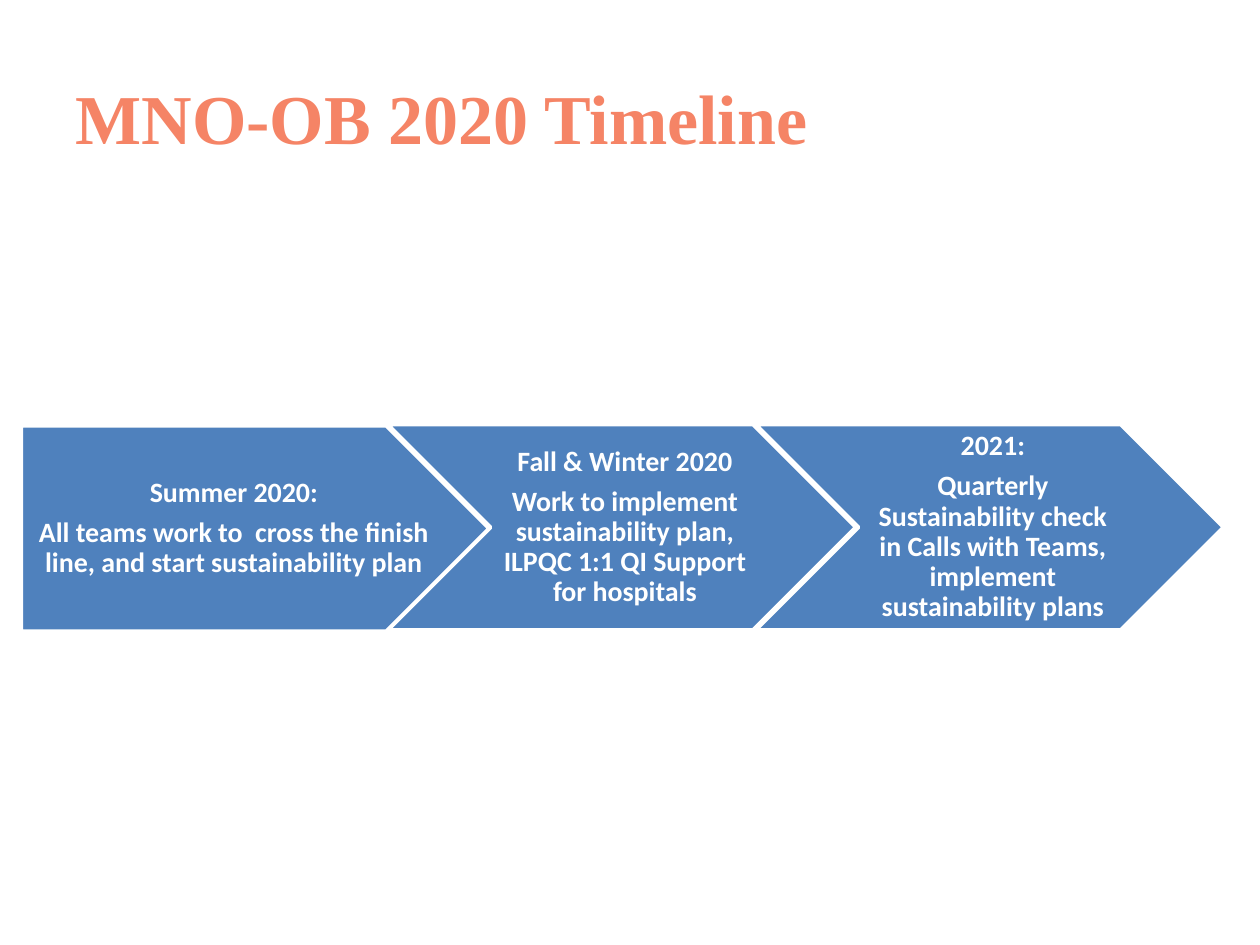
from pptx import Presentation
from pptx.dml.color import RGBColor
from pptx.enum.shapes import MSO_SHAPE
from pptx.enum.text import MSO_ANCHOR, PP_ALIGN
from pptx.util import Pt

PX = 9144  # 100 px to the inch
CORAL = RGBColor(0xF5, 0x84, 0x66)
BLUE = RGBColor(0x4F, 0x81, 0xBD)
WHITE = RGBColor(0xFF, 0xFF, 0xFF)


def style(obj, form):
    for key, val in form.items():
        setattr(obj, key, val)


deck = Presentation()
style(deck, {"slide_width": 1000 * PX, "slide_height": 750 * PX})
slide = deck.slides.add_slide(deck.slide_layouts[5])

# Title
title = slide.shapes.title
style(title, {"left": 50 * PX, "top": 30 * PX,
              "width": 900 * PX, "height": 125 * PX})
title.text_frame.text = "MNO-OB 2020 Timeline"
title.text_frame.vertical_anchor = MSO_ANCHOR.MIDDLE
head = title.text_frame.paragraphs[0]
head.alignment = PP_ALIGN.LEFT
style(head.font, {"name": "Times New Roman", "size": Pt(40), "bold": True})
head.font.color.rgb = CORAL

# Timeline steps: shape, left, top, left inset, lines
STEPS = [
    (MSO_SHAPE.PENTAGON, 17, 338, 9,
     ["Summer 2020:",
      "All teams work to  cross the finish line, and start "
      "sustainability plan"]),
    (MSO_SHAPE.CHEVRON, 308, 337, 7,
     ["Fall & Winter 2020",
      "Work to implement sustainability plan, ILPQC 1:1 QI Support "
      "for hospitals"]),
    (MSO_SHAPE.CHEVRON, 600, 337, 7,
     ["2021:",
      "Quarterly Sustainability check in Calls with Teams, implement "
      "sustainability plans"]),
]
PARA = {"alignment": PP_ALIGN.CENTER, "line_spacing": 0.9,
        "space_after": Pt(5.6)}
FONT = {"name": "Calibri", "size": Pt(16), "bold": True}

for kind, left, top, inset, lines in STEPS:
    step = slide.shapes.add_shape(kind, left * PX, top * PX,
                                  371 * PX, 163 * PX)
    step.shadow.inherit = False
    step.fill.solid()
    step.fill.fore_color.rgb = BLUE
    step.line.color.rgb = WHITE
    step.line.width = Pt(2)

    # Step text
    frame = step.text_frame
    style(frame, {"word_wrap": True, "vertical_anchor": MSO_ANCHOR.MIDDLE,
                  "margin_left": inset * PX, "margin_right": 2 * PX,
                  "margin_top": 5 * PX, "margin_bottom": 5 * PX})
    frame.text = "\n".join(lines)
    for para in frame.paragraphs:
        style(para, PARA)
        style(para.font, FONT)
        para.font.color.rgb = WHITE

deck.save("out.pptx")
